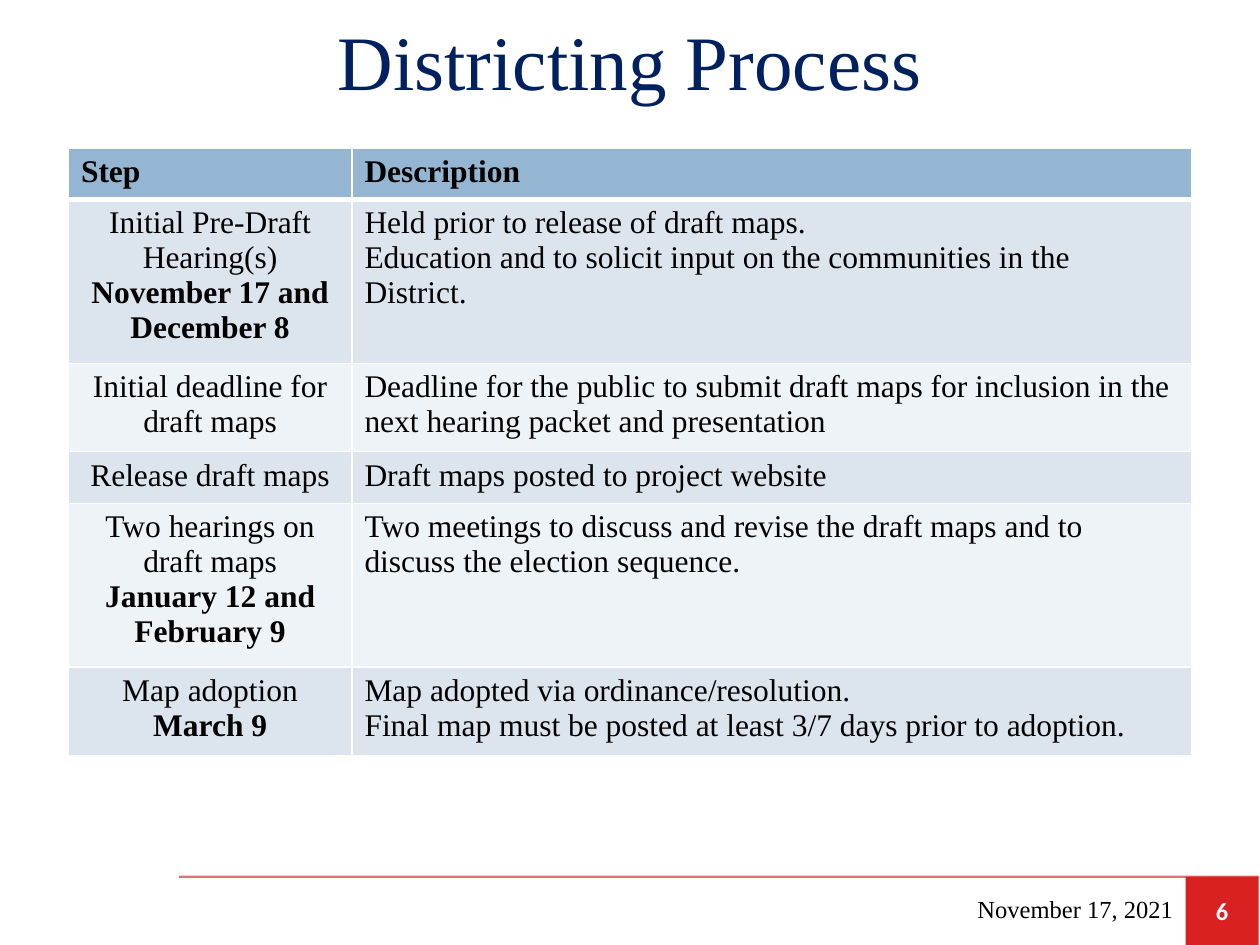
from lxml.etree import SubElement
from pptx import Presentation
from pptx.dml.color import RGBColor
from pptx.enum.shapes import MSO_CONNECTOR as LINE, MSO_SHAPE as SHAPE
from pptx.enum.text import MSO_ANCHOR as ANCHOR, PP_ALIGN as ALIGN
from pptx.oxml.ns import qn
from pptx.util import Pt

NAVY = RGBColor(0x00, 0x20, 0x60)
BLACK = RGBColor(0x00, 0x00, 0x00)
WHITE = RGBColor(0xFF, 0xFF, 0xFF)
RED = RGBColor(0xD9, 0x21, 0x21)
RULE = RGBColor(0xC8, 0x00, 0x00)
HEAD = RGBColor(0x94, 0xB6, 0xD2)
BANDS = RGBColor(0xDC, 0xE5, 0xEE), RGBColor(0xEE, 0xF3, 0xF7)
SERIF = "Times New Roman"

STEPS = [
    ("Step", "Description"),
    ("Initial Pre-Draft Hearing(s)\nNovember 17 and December 8",
     "Held prior to release of draft maps.\n"
     "Education and to solicit input on the communities in the District."),
    ("Initial deadline for draft maps",
     "Deadline for the public to submit draft maps for inclusion in the "
     "next hearing packet and presentation"),
    ("Release draft maps", "Draft maps posted to project website"),
    ("Two hearings on draft maps\nJanuary 12 and February 9",
     "Two meetings to discuss and revise the draft maps and to discuss "
     "the election sequence."),
    ("Map adoption\nMarch 9",
     "Map adopted via ordinance/resolution.\n"
     "Final map must be posted at least 3/7 days prior to adoption."),
]


def style(para, size, color, align=ALIGN.LEFT, bold=False, face=SERIF):
    """Format a paragraph and its runs."""
    para.alignment = align
    for run in para.runs:
        font = run.font
        font.name, font.size, font.bold = face, Pt(size), bold
        font.color.rgb = color


def write(shape, text, size, color, align, **kind):
    """Put one middle-anchored line of text in a shape."""
    frame = shape.text_frame
    frame.word_wrap = True
    frame.vertical_anchor = ANCHOR.MIDDLE
    frame.text = text
    style(frame.paragraphs[0], size, color, align, **kind)


def add_title(slide, text):
    """Place and fill the title."""
    title = slide.shapes.title
    title.left, title.top = Pt(0.72), Pt(0)
    title.width, title.height = Pt(718.56), Pt(68.4)
    write(title, text, 44, NAVY, ALIGN.CENTER)


def add_rule(slide):
    """Draw the half-clear line above the footer."""
    rule = slide.shapes.add_connector(
        LINE.STRAIGHT, Pt(102.24), Pt(501), Pt(719.28), Pt(501))
    rule.line.width = Pt(1.25)
    rule.line.color.rgb = RULE
    props = rule.line._get_or_add_ln().find(qn("a:solidFill"))
    SubElement(props[0], qn("a:alpha"), val="55000")
    SubElement(rule._element.spPr, qn("a:effectLst"))


def add_footer(slide, date, number):
    """Draw the page number tile and the date."""
    tile = slide.shapes.add_shape(
        SHAPE.RECTANGLE, Pt(677.5), Pt(501), Pt(41.78), Pt(39))
    tile.shadow.inherit = False
    tile.fill.solid()
    tile.fill.fore_color.rgb = RED
    tile.line.fill.background()
    write(tile, number, 14, WHITE, ALIGN.CENTER, bold=True, face="Calibri")
    box = slide.shapes.add_textbox(Pt(467.28), Pt(505), Pt(210.24), Pt(28.8))
    write(box, date, 14, BLACK, ALIGN.RIGHT)


def set_edges(cell, top, low):
    """Give a cell white borders."""
    props = cell._tc.get_or_add_tcPr()
    for side, width in zip("LRTB", (1, 1, top, low)):
        edge = SubElement(props, qn(f"a:ln{side}"), w=str(Pt(width)))
        fill = SubElement(edge, qn("a:solidFill"))
        SubElement(fill, qn("a:srgbClr"), val=str(WHITE))


def fill_cell(cell, text, row, col):
    """Write and format one table cell."""
    set_edges(cell, 3 if row == 1 else 1, 3 if row == 0 else 1)
    cell.fill.solid()
    cell.fill.fore_color.rgb = BANDS[(row - 1) % 2] if row else HEAD
    cell.text_frame.text = text
    align = ALIGN.CENTER if row and col == 0 else ALIGN.LEFT
    for num, para in enumerate(cell.text_frame.paragraphs):
        bold = row == 0 or (col == 0 and num > 0)
        style(para, 18, BLACK, align, bold)


def add_steps(slide, data):
    """Build the table of steps."""
    high = 29.52
    table = slide.shapes.add_table(
        len(data), 2, Pt(39.1), Pt(84.5), Pt(642), Pt(high * len(data))).table
    for col, width in zip(table.columns, (162, 480)):
        col.width = Pt(width)
    for row, texts in enumerate(data):
        table.rows[row].height = Pt(high)
        for col, text in enumerate(texts):
            fill_cell(table.cell(row, col), text, row, col)


def main():
    """Build and save the slide."""
    deck = Presentation()
    deck.slide_width, deck.slide_height = Pt(720), Pt(540)
    slide = deck.slides.add_slide(deck.slide_layouts[5])
    add_rule(slide)
    add_title(slide, "Districting Process")
    add_footer(slide, "November 17, 2021", "6")
    add_steps(slide, STEPS)
    deck.save("out.pptx")


if __name__ == "__main__":
    main()
